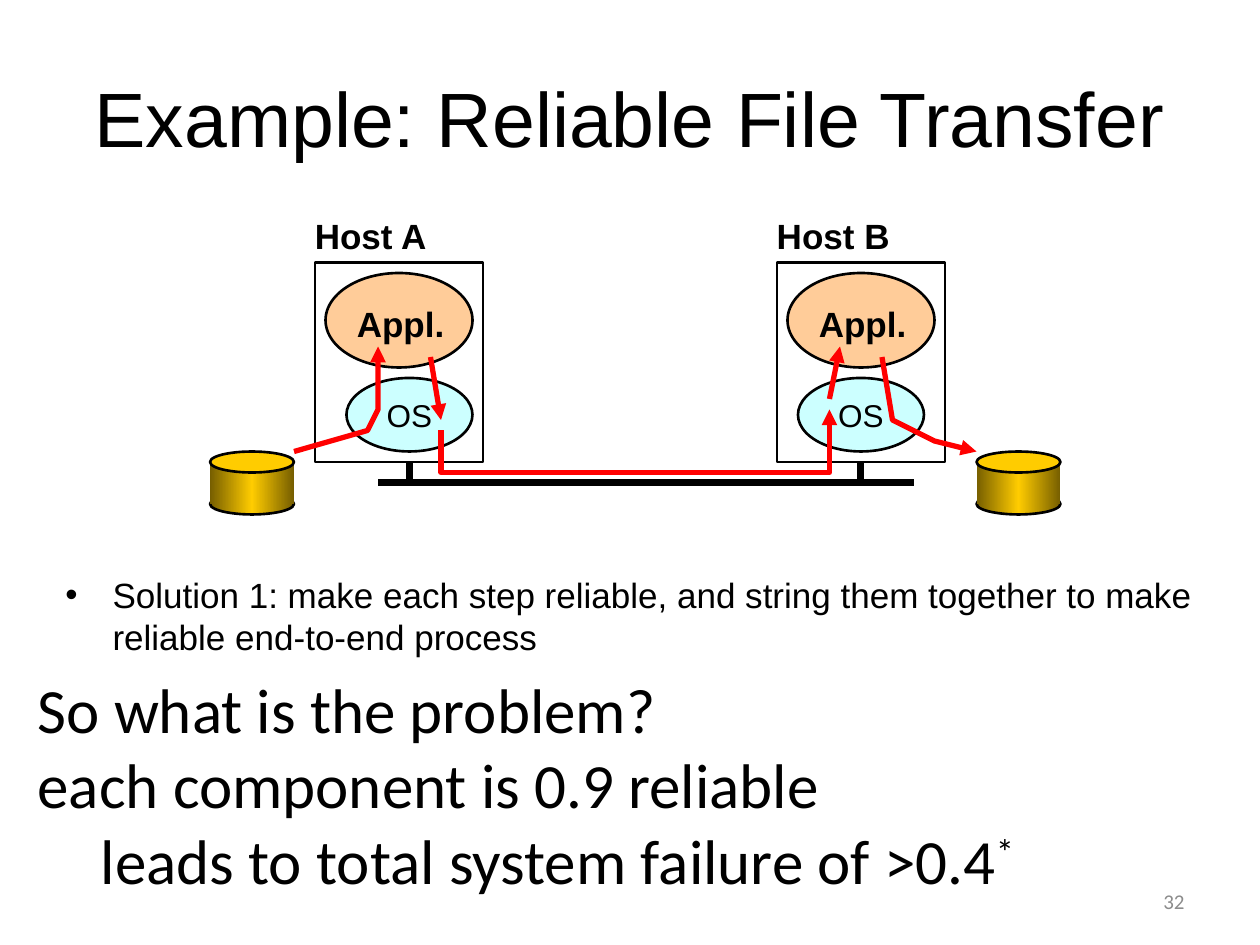
import copy

from pptx import Presentation
from pptx import util as u
from pptx.dml.color import RGBColor
from pptx.enum import shapes, text
from pptx.oxml import ns, xmlchemy

Cm, Pt = u.Cm, u.Pt

COLORS = {
    "ink": "000000",
    "app": "FFCC99",
    "os": "CCFFFF",
    "disk": "FFCC00",
    "disk_edge": "765E00",
    "flow": "FF0000",
    "number": "8C8C8C",
}


def color(key):
    return RGBColor.from_string(COLORS[key])


def grid(*steps):
    """Diagram grid: twelve steps to 2.54 cm."""
    return [Cm(2.54 / 12 * step) for step in steps]


def add_element(parent, tag, **attributes):
    child = xmlchemy.OxmlElement(tag)
    for key, value in attributes.items():
        child.set(key, value)
    parent.append(child)


def format_runs(frame, size, font="Arial", ink="ink", bold=False):
    for paragraph in frame.paragraphs:
        for run in paragraph.runs:
            run.font.size = Pt(size)
            run.font.name = font
            run.font.bold = bold
            run.font.color.rgb = color(ink)


def add_text(slide, box, content, size, font="Arial", ink="ink", bold=False,
             wrap=True, align=text.PP_ALIGN.LEFT, anchor=text.MSO_ANCHOR.TOP):
    frame = slide.shapes.add_textbox(*box).text_frame
    frame.word_wrap = wrap
    frame.vertical_anchor = anchor
    frame.text = content
    for paragraph in frame.paragraphs:
        paragraph.alignment = align
    format_runs(frame, size, font, ink, bold)
    return frame


def add_outlined(slide, kind, box, fill=None):
    shape = slide.shapes.add_shape(kind, *grid(*box))
    shape.shadow.inherit = False
    shape.line.color.rgb = color("ink")
    shape.line.width = Pt(1.5)
    if fill:
        shape.fill.solid()
        shape.fill.fore_color.rgb = color(fill)
    else:
        shape.fill.background()
    return shape


def shade_metal(shape):
    shape.fill.gradient()
    shape.fill.gradient_angle = 0
    stops = shape._element.spPr.find(ns.qn("a:gradFill")).find(ns.qn("a:gsLst"))
    stops.insert(1, copy.deepcopy(stops[0]))
    for stop, position, key in zip(shape.fill.gradient_stops, (0, 0.5, 1),
                                   ("disk_edge", "disk", "disk_edge")):
        stop.position = position
        stop.color.rgb = color(key)


def add_disk(slide, left, top):
    oval, rect = shapes.MSO_SHAPE.OVAL, shapes.MSO_SHAPE.RECTANGLE
    shade_metal(add_outlined(slide, oval, (left, top + 4, 8, 2)))
    side = add_outlined(slide, rect, (left, top + 1, 8, 4))
    side.line.fill.background()
    shade_metal(side)
    add_outlined(slide, oval, (left, top, 8, 2), "disk")


def add_host(slide, name, left, os_left):
    oval = shapes.MSO_SHAPE.OVAL
    add_outlined(slide, oval, (left + 1, 26, 14, 9), "app")
    host = add_outlined(slide, shapes.MSO_SHAPE.RECTANGLE, (left, 25, 16, 19))
    system = add_outlined(slide, oval, (os_left, 36, 12, 7), "os").text_frame
    system.word_wrap = False
    system.vertical_anchor = text.MSO_ANCHOR.MIDDLE
    system.text = "OS"
    system.paragraphs[0].alignment = text.PP_ALIGN.CENTER
    format_runs(system, 18)
    add_text(slide, grid(left + 2.8, 28.2, 10.8, 5.2), "Appl.", 20, bold=True, wrap=False)
    add_text(slide, grid(left - 1.2, 19.8, 13.2, 5.2), name, 20, bold=True, wrap=False)
    return host


def style_line(line, ink, width, arrow=False):
    line.color.rgb = color(ink)
    line.width = Pt(width)
    if arrow:
        add_element(line._get_or_add_ln(), "a:tailEnd", type="triangle")


def add_line(slide, start, end, ink="ink", width=4, arrow=False):
    connector = slide.shapes.add_connector(
        shapes.MSO_CONNECTOR.STRAIGHT, *grid(*start, *end))
    style_line(connector.line, ink, width, arrow)
    add_element(connector._element.spPr, "a:effectLst")
    return connector


def add_flow(slide, *points):
    """Red arrow: a connector for two points, an open outline for more."""
    if len(points) == 2:
        add_line(slide, *points, ink="flow", width=3, arrow=True)
        return
    start, *rest = [grid(*point) for point in points]
    builder = slide.shapes.build_freeform(*start)
    builder.add_line_segments(rest, close=False)
    route = builder.convert_to_shape()
    route.shadow.inherit = False
    route.fill.background()
    style_line(route.line, "flow", 3, arrow=True)


def add_solution(slide):
    solution = add_text(
        slide, (Cm(1.07), Cm(11.43), Cm(23.93), Cm(1.9)),
        "Solution 1: make each step reliable, and string them together "
        "to make reliable end-to-end process", 20).paragraphs[0]
    solution.space_before = Pt(4)
    properties = solution._p.get_or_add_pPr()
    properties.set("marL", str(Cm(0.95)))
    properties.set("indent", str(-Cm(0.95)))
    add_element(properties, "a:buFont", typeface="Arial")
    add_element(properties, "a:buChar", char="•")


def add_problem(slide):
    problem = add_text(
        slide, (Cm(0.51), Cm(13.39), Cm(23.29), Cm(4.88)),
        "So what is the problem?\neach component is 0.9 reliable\n"
        "leads to total system failure of >0.4", 36, "Calibri")
    result = problem.paragraphs[-1]
    result._p.get_or_add_pPr().set("marL", str(Cm(1.27)))
    result.add_run().text = "*"
    format_runs(problem, 36, "Calibri")
    result.runs[-1].font._element.set("baseline", "30000")


def main():
    deck = Presentation()
    deck.slide_width, deck.slide_height = Cm(25.4), Cm(19.05)
    slide = deck.slides.add_slide(deck.slide_layouts[6])

    # Title
    add_text(slide, (Cm(1.27), Cm(0.76), Cm(22.86), Cm(3.18)),
             "Example: Reliable File Transfer", 44,
             align=text.PP_ALIGN.CENTER, anchor=text.MSO_ANCHOR.MIDDLE)

    # Disks and hosts
    for disk_left in (20, 93):
        add_disk(slide, disk_left, 43)
    add_host(slide, "Host A", 30, 33)
    host_b = add_host(slide, "Host B", 74, 76)

    # Network
    add_line(slide, (36, 46), (87, 46))
    add_line(slide, (39, 44), (39, 46))
    drop_b = add_line(slide, (82, 44), (82, 46))
    drop_b.begin_connect(host_b, 2)

    # Path of the file from disk to disk
    add_flow(slide, (28, 43), (35, 41), (36, 39), (36, 33))
    add_flow(slide, (41, 34), (42, 40))
    add_flow(slide, (42, 41), (42, 45), (79, 45), (79, 39))
    add_flow(slide, (79, 38), (80, 33))
    add_flow(slide, (84, 34), (85, 40), (89, 42), (93, 43))

    # Discussion and slide number
    add_solution(slide)
    add_text(slide, (Cm(18.21), Cm(17.65), Cm(5.92), Cm(1.02)), "32", 12,
             "Calibri", "number", align=text.PP_ALIGN.RIGHT,
             anchor=text.MSO_ANCHOR.MIDDLE)
    add_problem(slide)

    deck.save("out.pptx")


if __name__ == "__main__":
    main()
